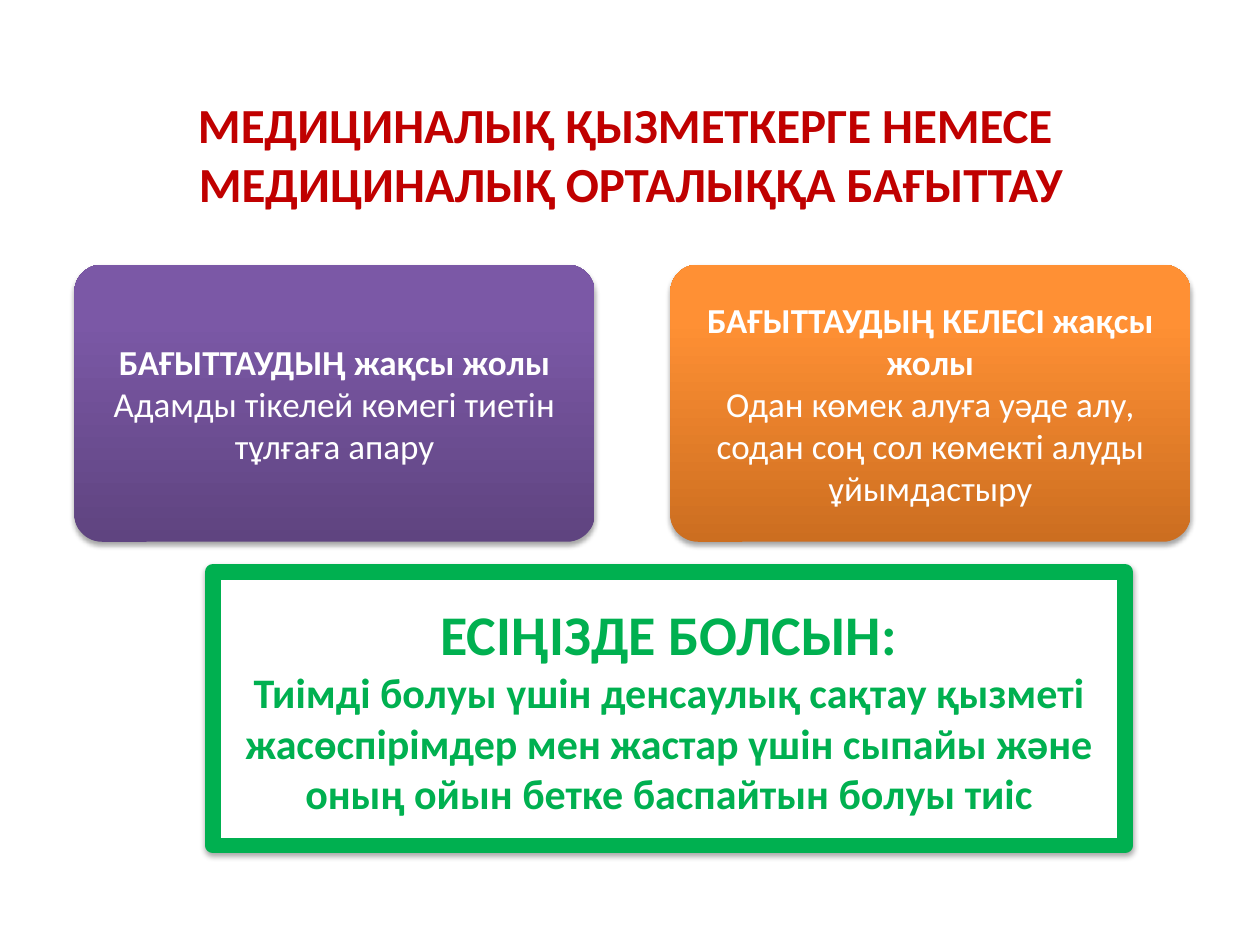
from lxml import etree
from pptx import Presentation
from pptx.dml.color import RGBColor
from pptx.enum.shapes import MSO_SHAPE
from pptx.enum.text import MSO_ANCHOR, MSO_AUTO_SIZE, PP_ALIGN
from pptx.oxml.ns import qn
from pptx.util import Inches, Pt

ROUNDED = MSO_SHAPE.ROUNDED_RECTANGLE
RECTANGLE = MSO_SHAPE.RECTANGLE
MIDDLE = MSO_ANCHOR.MIDDLE
CENTER = PP_ALIGN.CENTER
NO_AUTOFIT = MSO_AUTO_SIZE.NONE

FONT = "Calibri"
TITLE_ONLY = 5
COLORS = {"title": "C00000", "white": "FFFFFF", "green": "00B050", "shadow": "000000"}
GRADIENTS = {
    "purple": [(0, "5F4480"), (80, "7B58A6"), (100, "7C57A8")],
    "orange": [(0, "CC6E20"), (80, "FF9034"), (100, "FF9136")],
}

CARD_LEFT, CARD_TOP, CARD_STEP = 0.59, 2.1, 4.73
CARD_SIZE = (4.13, 2.2)
CARDS = [
    ("purple", "БАҒЫТТАУДЫҢ жақсы жолы", "Адамды тікелей көмегі тиетін тұлғаға апару"),
    ("orange", "БАҒЫТТАУДЫҢ КЕЛЕСІ жақсы жолы",
     "Одан көмек алуға уәде алу, содан соң сол көмекті алуды ұйымдастыру"),
]


def rgb(name):
    return RGBColor.from_string(COLORS[name])


def add_child(parent, tag, **attributes):
    values = {key: str(value) for key, value in attributes.items()}
    return etree.SubElement(parent, qn(tag), values)


def write(para, text, size, color, bold=False):
    """Fill one centred paragraph with formatted text."""
    para.text = text
    para.alignment = CENTER
    para.font.name = FONT
    para.font.size = Pt(size)
    para.font.bold = bold
    para.font.color.rgb = rgb(color)
    for span in para.runs:
        span.font.size = Pt(size)
        span.font.name = FONT
        span.font.bold = bold
        span.font.color.rgb = rgb(color)


def prepare_frame(frame, side=0.1, edge=0.05):
    frame.word_wrap = True
    frame.auto_size = NO_AUTOFIT
    frame.vertical_anchor = MIDDLE
    frame.margin_left = frame.margin_right = Inches(side)
    frame.margin_top = frame.margin_bottom = Inches(edge)


def add_shadow(shape):
    """Add a soft shadow that falls straight down."""
    shape.shadow.inherit = False
    effects = shape._element.spPr.find(qn("a:effectLst"))
    shadow = add_child(effects, "a:outerShdw", blurRad=Pt(3.1), dist=Pt(1.8),
                       dir=5400000, rotWithShape=0)
    color = add_child(shadow, "a:srgbClr", val=COLORS["shadow"])
    add_child(color, "a:alpha", val=35000)


def set_gradient(shape, stops):
    """Fill from bottom to top with any number of stops."""
    shape.fill.gradient()
    shape.fill.gradient_angle = 90
    stop_list = shape._element.spPr.find(qn("a:gradFill")).find(qn("a:gsLst"))
    for old_stop in list(stop_list):
        stop_list.remove(old_stop)
    for percent, color in stops:
        stop = add_child(stop_list, "a:gs", pos=percent * 1000)
        add_child(stop, "a:srgbClr", val=color)


def add_title(page, text):
    title = page.shapes.title
    title.left, title.top = Inches(0.18), Inches(0.73)
    title.width, title.height = Inches(9.65), Inches(0.98)
    prepare_frame(title.text_frame)
    write(title.text_frame.paragraphs[0], text, size=28, color="title", bold=True)


def add_card(page, left, gradient, heading, body):
    card = page.shapes.add_shape(ROUNDED, Inches(left), Inches(CARD_TOP),
                                 *map(Inches, CARD_SIZE))
    card.adjustments[0] = 0.1
    set_gradient(card, GRADIENTS[gradient])
    card.line.fill.background()
    add_shadow(card)
    frame = card.text_frame
    prepare_frame(frame, side=0.2, edge=0.17)
    write(frame.paragraphs[0], heading, size=20, color="white", bold=True)
    write(frame.add_paragraph(), body, size=20, color="white")


def add_reminder(page, heading, body):
    box = page.shapes.add_shape(RECTANGLE, Inches(1.69), Inches(4.54),
                                Inches(7.24), Inches(2.17))
    box.fill.solid()
    box.fill.fore_color.rgb = rgb("white")
    box.line.color.rgb = rgb("green")
    box.line.width = Pt(9)
    add_child(box._element.spPr.find(qn("a:ln")), "a:round")
    add_shadow(box)
    prepare_frame(box.text_frame)
    write(box.text_frame.paragraphs[0], heading, size=32, color="green", bold=True)
    write(box.text_frame.add_paragraph(), body, size=24, color="green", bold=True)


def main():
    deck = Presentation()
    deck.slide_width, deck.slide_height = Inches(10), Inches(7.5)
    page = deck.slides.add_slide(deck.slide_layouts[TITLE_ONLY])

    # Title
    add_title(page, "МЕДИЦИНАЛЫҚ ҚЫЗМЕТКЕРГЕ НЕМЕСЕ \vМЕДИЦИНАЛЫҚ ОРТАЛЫҚҚА БАҒЫТТАУ")

    # Two ways of referral, side by side
    for index, card in enumerate(CARDS):
        add_card(page, CARD_LEFT + index * CARD_STEP, *card)

    # Reminder below the cards
    add_reminder(page, "ЕСІҢІЗДЕ БОЛСЫН:",
                 "Тиімді болуы үшін денсаулық сақтау қызметі жасөспірімдер мен "
                 "жастар үшін сыпайы және оның ойын бетке баспайтын болуы тиіс")

    deck.save("out.pptx")


if __name__ == "__main__":
    main()
